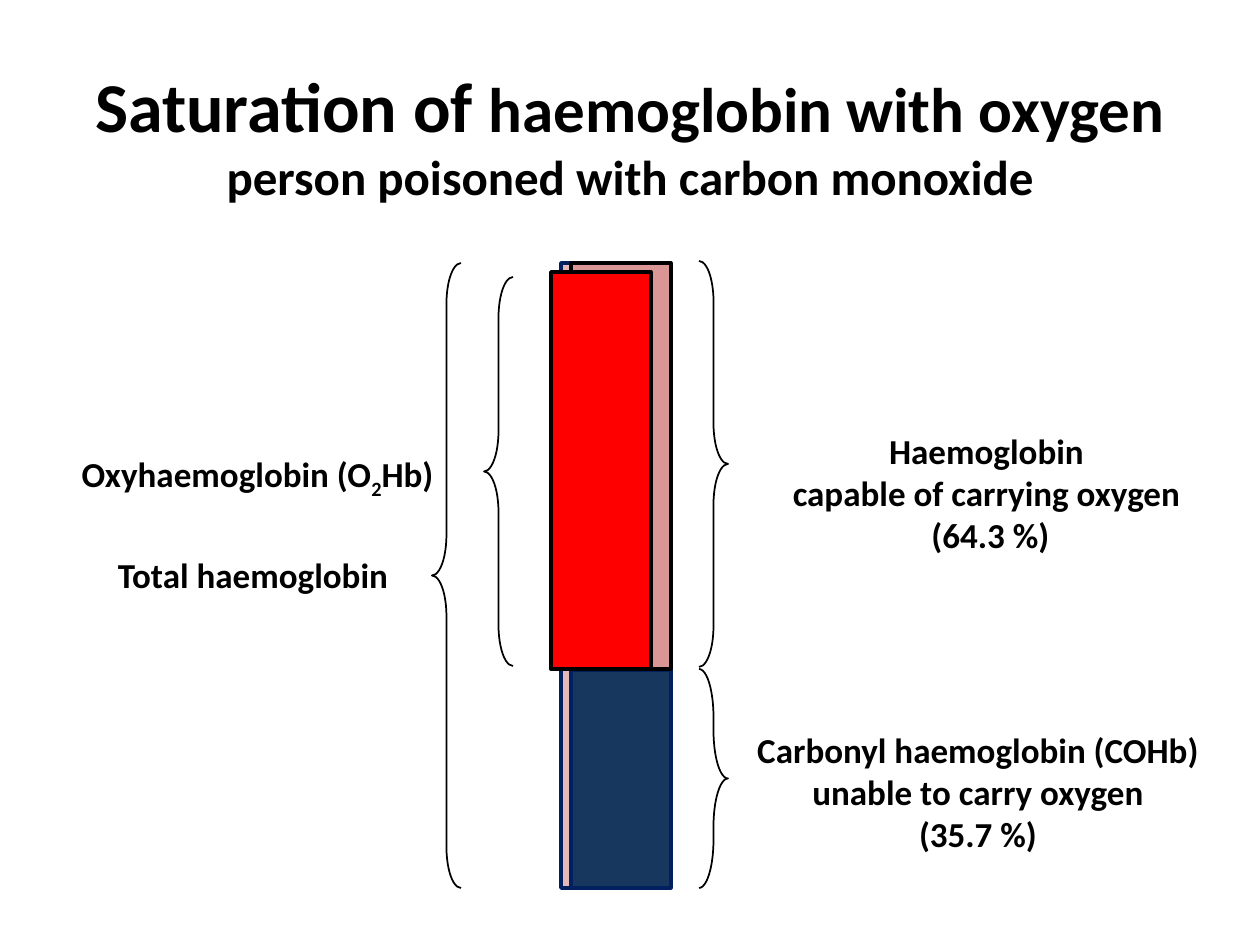
from pptx import Presentation
from pptx import util as u
from pptx.dml.color import RGBColor
from pptx.enum import shapes, text

PX = 914400 // 126
FONT = "Calibri"
COLORS = {
    "black": "000000", "navy": "002060", "pink": "E6B9B8",
    "blue": "17375E", "rose": "D99694", "red": "FF0000",
}

# Content; boxes are left, top, width, height in px
TITLE_BOX = (54, 52, 1152, 163)
TITLE = [("Saturation of ", 40), ("haemoglobin with oxygen ", 36),
         ("person poisoned with carbon monoxide", 28)]

BAR_WIDTH = 100
BARS = [  # left, top, height, fill, line
    (561, 263, 625, "pink", "navy"),   # total haemoglobin
    (571, 670, 218, "blue", "navy"),   # carbonyl haemoglobin
    (571, 263, 406, "rose", "black"),  # able to carry oxygen
    (551, 272, 397, "red", "black"),   # oxyhaemoglobin
]

BRACE_WIDTH = 29
LEFT, RIGHT = shapes.MSO_SHAPE.LEFT_BRACE, shapes.MSO_SHAPE.RIGHT_BRACE
BRACES = [  # kind, left, top, height, curve
    (RIGHT, 699, 261, 406, 1.4),
    (RIGHT, 699, 669, 219, 1.66),
    (LEFT, 432, 263, 625, 1.4),
    (LEFT, 484, 277, 389, 1.4),
]

LABELS = [  # box, paragraphs of (text, is subscript) runs
    ((84, 547, 338, 55), [[("Total haemoglobin", False)]]),
    ((730, 722, 496, 140),
     [[("Carbonyl haemoglobin (COHb)\vunable to carry oxygen\v(35.7 %)", False)]]),
    ((728, 423, 525, 140),
     [[("Haemoglobin ", False)],
      [("capable of carrying oxygen \v(64.3 %)", False)]]),
    ((64, 446, 387, 55),
     [[("Oxyhaemoglobin (O", False), ("2", True), ("Hb)", False)]]),
]


def rgb(name):
    return RGBColor.from_string(COLORS[name])


def emu(*px):
    return [v * PX for v in px]


def style(p, size=None):
    p.alignment = text.PP_ALIGN.CENTER
    p.font.name = FONT
    p.font.bold = True
    p.font.color.rgb = rgb("black")
    if size:
        p.font.size = u.Pt(size)


def add_outline(s, kind, box, line, width):
    sp = s.shapes.add_shape(kind, *emu(*box))
    sp.shadow.inherit = False
    sp.line.color.rgb = rgb(line)
    sp.line.width = u.Pt(width)
    return sp


def add_label(s, box, paragraphs):
    tf = s.shapes.add_textbox(*emu(*box)).text_frame
    tf.word_wrap = True
    tf.auto_size = text.MSO_AUTO_SIZE.SHAPE_TO_FIT_TEXT
    for i, runs in enumerate(paragraphs):
        p = tf.add_paragraph() if i else tf.paragraphs[0]
        style(p, 20)
        for content, subscript in runs:
            for j, part in enumerate(content.split("\v")):
                if j:
                    p.add_line_break()
                r = p.add_run()
                r.text = part
                if subscript:
                    r.font._element.set("baseline", "-25000")


def main():
    prs = Presentation()
    prs.slide_width, prs.slide_height = u.Inches(10), u.Inches(7.5)
    s = prs.slides.add_slide(prs.slide_layouts[5])

    # Title
    title = s.shapes.title
    title.left, title.top, title.width, title.height = emu(*TITLE_BOX)
    tf = title.text_frame
    tf.vertical_anchor = text.MSO_ANCHOR.MIDDLE
    tf.auto_size = text.MSO_AUTO_SIZE.NONE
    p = tf.paragraphs[0]
    style(p)
    for content, size in TITLE:
        r = p.add_run()
        r.text = content
        r.font.size = u.Pt(size)

    # Bars
    for left, top, height, fill, line in BARS:
        sp = add_outline(s, shapes.MSO_SHAPE.RECTANGLE,
                         (left, top, BAR_WIDTH, height), line, 2)
        sp.fill.solid()
        sp.fill.fore_color.rgb = rgb(fill)

    # Braces
    for kind, left, top, height, curve in BRACES:
        sp = add_outline(s, kind, (left, top, BRACE_WIDTH, height), "black", 1)
        sp.fill.background()
        sp.adjustments[0] = curve

    # Labels
    for box, paragraphs in LABELS:
        add_label(s, box, paragraphs)

    prs.save("out.pptx")


if __name__ == "__main__":
    main()
